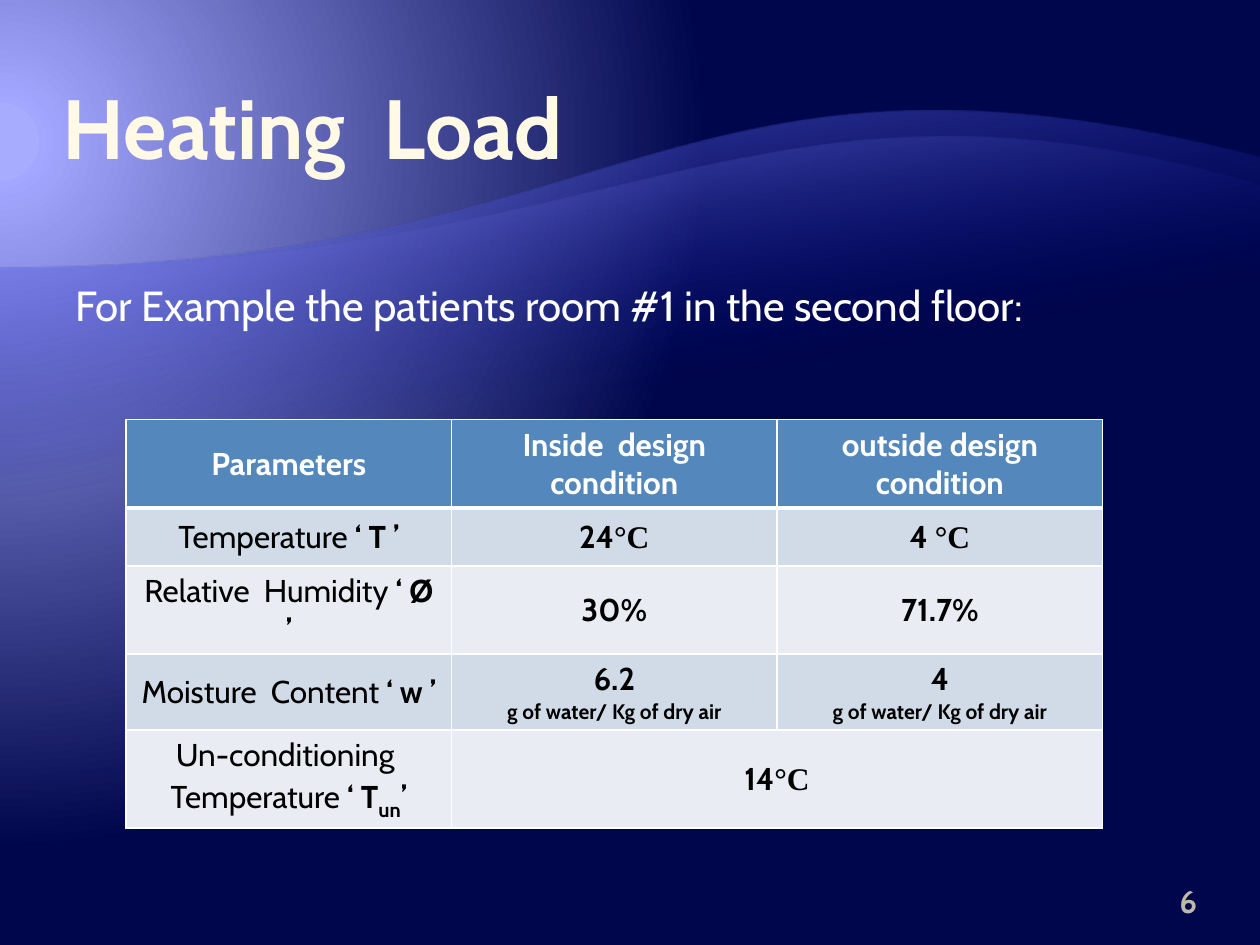
"""Build the heating load slide with its design condition table."""
from lxml.etree import SubElement
from pptx import Presentation
from pptx.dml.color import RGBColor
from pptx.enum.text import MSO_ANCHOR, PP_ALIGN
from pptx.oxml.ns import qn
from pptx.util import Cm, Pt

COLORS = {
    "glow": "A8ACFF", "halo": "A3A7FF", "night": "00064B",
    "deep": "000D9E", "wave": "797FFF",
    "title": "FFF9E5", "white": "FFFFFF", "black": "000000", "number": "BDB8A9",
    "header": "5488BC", "dark_row": "D1DAE7", "light_row": "E9EDF3",
}
FONT = "Cabin"
SYMBOL = {"font": "Times New Roman"}
PLAIN = {"bold": False}
UNIT = [("g of water/ Kg of dry air", {"size": 12})]
HEADERS = ["Parameters", "Inside  design condition", "outside design condition"]
ROWS = [
    [[[("Temperature ", PLAIN), ("‘ T ’", {})]],
     [[("24", {}), ("°C", SYMBOL)]],
     [[("4 ", {}), ("°C", SYMBOL)]]],
    [[[("Relative  Humidity ", PLAIN), ("‘ Ø ’", {})]],
     [[("30%", {})]],
     [[("71.7%", {})]]],
    [[[("Moisture  Content ", PLAIN), ("‘ w ’", {})]],
     [[("6.2", {})], UNIT],
     [[("4", {})], UNIT]],
    [[[("Un-conditioning ", PLAIN)],
      [("Temperature ", PLAIN), ("‘ T", {}), ("un", {"size": 20, "baseline": -25}), ("’", {})]],
     [[("14", {}), ("°C", SYMBOL)]]],
]
ROW_HEIGHTS = [1.63, 1.17, 1.17, 1.4, 1.63]


def add_run(paragraph, text, size=18, color="black", bold=True, font=FONT, baseline=0):
    """Append a formatted run to a paragraph."""
    run = paragraph.add_run()
    run.text = text
    run.font.size = Pt(size)
    run.font.bold = bold
    run.font.name = font
    run.font.color.rgb = RGBColor.from_string(COLORS[color])
    if baseline:
        run._r.get_or_add_rPr().set("baseline", str(baseline * 1000))


def add_text(slide, text, left, top, width, height, align=PP_ALIGN.LEFT,
             anchor=MSO_ANCHOR.TOP, insets=(0.25, 0.13, 0.25, 0.13), **run_format):
    """Add a one-paragraph text box and return its paragraph."""
    frame = slide.shapes.add_textbox(Cm(left), Cm(top), Cm(width), Cm(height)).text_frame
    frame.word_wrap = True
    frame.vertical_anchor = anchor
    (frame.margin_left, frame.margin_top,
     frame.margin_right, frame.margin_bottom) = map(Cm, insets)
    paragraph = frame.paragraphs[0]
    paragraph.alignment = align
    add_run(paragraph, text, **run_format)
    return paragraph


def add_color(parent, color, alpha=100):
    """Append a colour element, with transparency where needed."""
    element = SubElement(parent, qn("a:srgbClr"), val=COLORS[color])
    if alpha < 100:
        SubElement(element, qn("a:alpha"), val=str(alpha * 1000))


def set_gradient(properties, stops, angle=None, focus=None):
    """Turn a solid fill into a linear or a circular gradient."""
    solid = properties.find(qn("a:solidFill"))
    gradient = SubElement(properties, qn("a:gradFill"), rotWithShape="1")
    properties.replace(solid, gradient)
    stop_list = SubElement(gradient, qn("a:gsLst"))
    for position, color, alpha in stops:
        stop = SubElement(stop_list, qn("a:gs"), pos=str(position * 1000))
        add_color(stop, color, alpha)
    if focus:
        circle = SubElement(gradient, qn("a:path"), path="circle")
        sides = {side: str(value * 1000) for side, value in zip("ltrb", focus)}
        SubElement(circle, qn("a:fillToRect"), **sides)
    else:
        SubElement(gradient, qn("a:lin"), ang=str(angle * 60000), scaled="0")


def set_background(slide):
    """Fill the slide with a glow from the upper left."""
    slide.background.fill.solid()
    set_gradient(slide.element.find(".//" + qn("p:bgPr")),
                 [(5, "glow", 100), (5, "halo", 100), (90, "night", 100)],
                 focus=(20, 30, 135, 100))


def add_wave(slide, right_top, bottom, control, color, alpha):
    """Add a full-width band whose top edge is one curve."""
    left_top, width = 5.41, 25.4
    builder = slide.shapes.build_freeform(Cm(width), Cm(right_top))
    builder.add_line_segments([(Cm(width), Cm(bottom)), (0, Cm(bottom)), (0, Cm(left_top))])
    shape = builder.convert_to_shape()
    shape.shadow.inherit = False
    shape.line.fill.background()
    shape.fill.solid()
    outline = shape.element.find(".//" + qn("a:path"))
    curve = SubElement(outline, qn("a:cubicBezTo"))
    for x, y in [(12.7, left_top), control, (width, right_top)]:
        SubElement(curve, qn("a:pt"), x=str(Cm(x)), y=str(Cm(y) - Cm(right_top)))
    closing = outline.find(qn("a:close"))
    if closing is None:
        SubElement(outline, qn("a:close"))
    else:
        outline.append(closing)
    set_gradient(shape.element.spPr, [(65, "deep", 0), (100, color, alpha)], angle=260)


def set_borders(cell, top=1, bottom=1):
    """Draw white lines on the four sides of a cell."""
    properties = cell._tc.get_or_add_tcPr()
    for index, (side, width) in enumerate(zip("LRTB", (1, 1, top, bottom))):
        line = SubElement(properties, qn("a:ln" + side), w=str(Pt(width)))
        add_color(SubElement(line, qn("a:solidFill")), "white")
        properties.insert(index, line)


def fill_cell(cell, paragraphs, fill, color="black"):
    """Write centred paragraphs into a cell and colour it."""
    cell.fill.solid()
    cell.fill.fore_color.rgb = RGBColor.from_string(COLORS[fill])
    cell.vertical_anchor = MSO_ANCHOR.MIDDLE
    frame = cell.text_frame
    for index, runs in enumerate(paragraphs):
        paragraph = frame.add_paragraph() if index else frame.paragraphs[0]
        paragraph.alignment = PP_ALIGN.CENTER
        for text, run_format in runs:
            add_run(paragraph, text, color=color, **run_format)


def add_conditions_table(slide):
    """Add the table of inside and outside design conditions."""
    table = slide.shapes.add_table(len(ROW_HEIGHTS), len(HEADERS), Cm(2.54), Cm(8.46),
                                   Cm(19.69), Cm(sum(ROW_HEIGHTS))).table
    for row, height in zip(table.rows, ROW_HEIGHTS):
        row.height = Cm(height)
    for column, header in enumerate(HEADERS):
        fill_cell(table.cell(0, column), [[(header, {})]], "header", "white")
    for index, row in enumerate(ROWS, 1):
        fill = "dark_row" if index % 2 else "light_row"
        for column, paragraphs in enumerate(row):
            fill_cell(table.cell(index, column), paragraphs, fill)
    last = len(ROWS)
    table.cell(last, 1).merge(table.cell(last, 2))
    for index, row in enumerate(table.rows):
        for cell in row.cells:
            set_borders(cell, top=3 if index == 1 else 1, bottom=1 if index else 3)


def main():
    """Build and save the slide."""
    presentation = Presentation()
    presentation.slide_width, presentation.slide_height = Cm(25.4), Cm(19.05)
    slide = presentation.slides.add_slide(presentation.slide_layouts[6])
    set_background(slide)
    add_wave(slide, 3.18, 18.62, (13.56, 0.13), "wave", 55)
    add_wave(slide, 3.73, 16.18, (15.19, 0.79), "halo", 30)
    example = add_text(slide, "For Example the patients room #1 in the second floor:",
                       1.27, 5.51, 22.86, 3.89, align=PP_ALIGN.JUSTIFY,
                       size=24, color="white", bold=False)
    example.space_before = Pt(4.8)
    indent = example._p.get_or_add_pPr()
    indent.set("marL", str(Cm(0.89)))
    indent.set("indent", str(Cm(-0.89)))
    add_conditions_table(slide)
    add_text(slide, "6", 22.66, 17.65, 1.47, 1.02, align=PP_ALIGN.RIGHT,
             anchor=MSO_ANCHOR.BOTTOM, insets=(0.25, 0.13, 0, 0.13), color="number")
    add_text(slide, "Heating  Load", 1.27, 1.47, 22.86, 2.11, anchor=MSO_ANCHOR.BOTTOM,
             insets=(0, 0.03, 0, 0.03), size=48, color="title")
    presentation.save("out.pptx")


if __name__ == "__main__":
    main()
